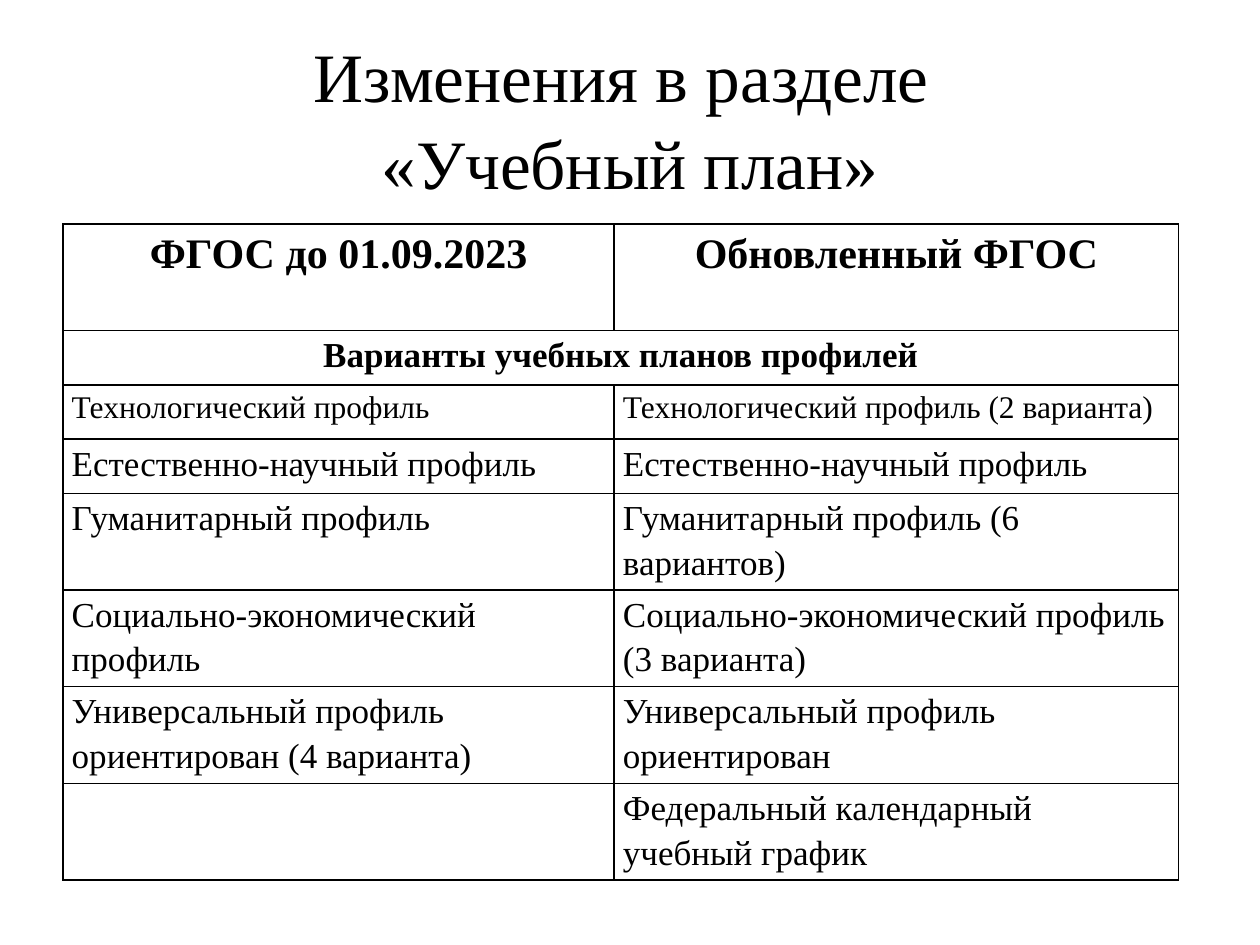
"""Build a slide comparing curriculum profiles before and after the updated standard."""
import pptx
import pptx.dml.color
import pptx.enum.text
import pptx.oxml
import pptx.oxml.ns
import pptx.util
from lxml import etree

Pt = pptx.util.Pt
CENTER = pptx.enum.text.PP_ALIGN.CENTER
LEFT = pptx.enum.text.PP_ALIGN.LEFT
FONT = "Times New Roman"
COLORS = {"text": "000000", "border": "000000", "fill": "FFFFFF"}

TITLE_LINES = ["Изменения в разделе ", "«Учебный план»"]
HEADERS = ("ФГОС до 01.09.2023", "Обновленный ФГОС")
SECTION = "Варианты учебных планов профилей"
PROFILES = [
    ("Технологический профиль", "Технологический профиль (2 варианта)"),
    ("Естественно-научный профиль", "Естественно-научный профиль"),
    ("Гуманитарный профиль", "Гуманитарный профиль (6 вариантов)"),
    ("Социально-экономический профиль", "Социально-экономический профиль (3 варианта)"),
    ("Универсальный профиль ориентирован (4 варианта)", "Универсальный профиль ориентирован"),
    ("", "Федеральный календарный учебный график"),
]
ROWS = [HEADERS, (SECTION, "")] + PROFILES
COLUMN_WIDTHS = [315, 322.5]
ROW_HEIGHTS = [61] + [31] * 3 + [51] * 4
ROW_SIZES = [24, 20, 18] + [20] * 5
HEADING_ROWS = 2


def add_run(paragraph, text, size, bold=False):
    run = paragraph.add_run()
    run.text = text
    run.font.name = FONT
    run.font.size = Pt(size)
    run.font.bold = bold
    run.font.color.rgb = pptx.dml.color.RGBColor.from_string(COLORS["text"])


def add_title(slide):
    frame = slide.shapes.add_textbox(Pt(36), Pt(21.6), Pt(648), Pt(90)).text_frame
    frame.word_wrap = True
    frame.vertical_anchor = pptx.enum.text.MSO_ANCHOR.MIDDLE
    paragraph = frame.paragraphs[0]
    paragraph.alignment = CENTER
    paragraph.line_spacing = 1.04
    for index, line in enumerate(TITLE_LINES):
        if index:
            paragraph.add_line_break()
        add_run(paragraph, line, 39.6)


def style_cell(cell, margin):
    cell.margin_left = cell.margin_right = Pt(margin)
    cell.margin_top = cell.margin_bottom = 0
    properties = cell._tc.get_or_add_tcPr()
    for side in ("lnL", "lnR", "lnT", "lnB"):
        line = etree.SubElement(properties, pptx.oxml.ns.qn(f"a:{side}"), w=str(Pt(1)))
        fill = etree.SubElement(line, pptx.oxml.ns.qn("a:solidFill"))
        etree.SubElement(fill, pptx.oxml.ns.qn("a:srgbClr"), val=COLORS["border"])
    cell.fill.solid()
    cell.fill.fore_color.rgb = pptx.dml.color.RGBColor.from_string(COLORS["fill"])


def add_profile_table(slide):
    frame = slide.shapes.add_table(len(ROWS), len(COLUMN_WIDTHS), Pt(36), Pt(128),
                                   Pt(sum(COLUMN_WIDTHS)), Pt(sum(ROW_HEIGHTS)))
    table = frame.table
    table.first_row = table.horz_banding = False
    for column, width in zip(table.columns, COLUMN_WIDTHS):
        column.width = Pt(width)
    for row_index, texts in enumerate(ROWS):
        table.rows[row_index].height = Pt(ROW_HEIGHTS[row_index])
        heading = row_index < HEADING_ROWS
        for column_index, text in enumerate(texts):
            cell = table.cell(row_index, column_index)
            style_cell(cell, 5 if row_index else 3.6)
            paragraph = cell.text_frame.paragraphs[0]
            paragraph.alignment = CENTER if heading else LEFT
            paragraph.line_spacing = 1.15
            if text:
                add_run(paragraph, text, ROW_SIZES[row_index], heading)
    table.cell(1, 0).merge(table.cell(1, 1))


def main():
    presentation = pptx.Presentation()
    presentation.slide_width, presentation.slide_height = Pt(720), Pt(540)
    slide = presentation.slides.add_slide(presentation.slide_layouts[6])
    add_title(slide)
    add_profile_table(slide)
    presentation.save("out.pptx")


if __name__ == "__main__":
    main()
